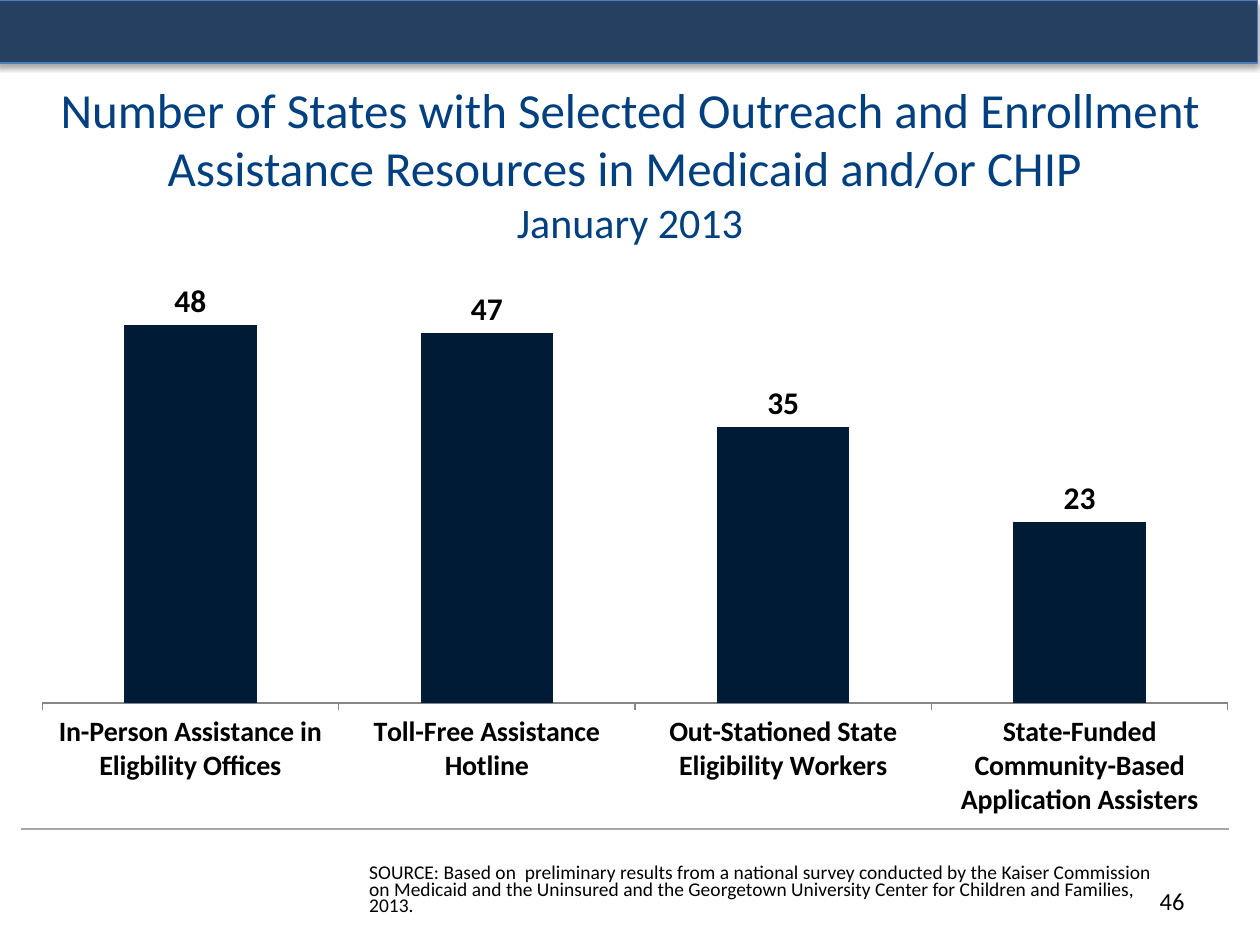
from lxml.etree import SubElement
from pptx import Presentation
from pptx.chart.data import CategoryChartData
from pptx.dml.color import RGBColor
from pptx.enum.chart import XL_CHART_TYPE as ChartType
from pptx.enum.chart import XL_LABEL_POSITION as LabelPosition
from pptx.enum.chart import XL_TICK_LABEL_POSITION as TickLabelPosition
from pptx.enum.chart import XL_TICK_MARK as TickMark
from pptx.enum.shapes import MSO_CONNECTOR as Connector
from pptx.enum.shapes import MSO_SHAPE as Shape
from pptx.enum.text import MSO_ANCHOR as Anchor
from pptx.enum.text import MSO_AUTO_SIZE as AutoSize
from pptx.enum.text import PP_ALIGN as Align
from pptx.oxml import parse_xml
from pptx.oxml.ns import nsdecls, qn
from pptx.util import Inches, Pt

WIDTH, HEIGHT = Inches(10), Inches(7.5)
FONT = "Calibri"
BLACK = RGBColor(0x00, 0x00, 0x00)
TITLE_BLUE = RGBColor(0x00, 0x40, 0x80)
BAR_NAVY = RGBColor(0x00, 0x1B, 0x36)
BANNER_FILL = RGBColor(0x25, 0x40, 0x61)
BANNER_LINE = RGBColor(0x4B, 0x7E, 0xBC)
RULE_GRAY = RGBColor(0xA6, 0xA6, 0xA6)
AXIS_GRAY = RGBColor(0x86, 0x86, 0x86)

TITLE = "Number of States with Selected Outreach and Enrollment Assistance Resources in Medicaid and/or CHIP "
DATE = "January 2013"
SOURCE = (
    "SOURCE: Based on  preliminary results from a national survey conducted by the "
    "Kaiser Commission on Medicaid and the Uninsured and the Georgetown University "
    "Center for Children and Families, 2013."
)
STATES = {
    "In-Person Assistance in Eligbility Offices": 48,
    "Toll-Free Assistance Hotline": 47,
    "Out-Stationed State Eligibility Workers": 35,
    "State-Funded Community-Based Application Assisters": 23,
}


def box(left, top, width, height):
    return [Inches(length) for length in (left, top, width, height)]


def set_format(target, values):
    for name, value in values.items():
        setattr(target, name, value)


def set_font(font, size, color=BLACK, bold=False):
    set_format(font, {"name": FONT, "size": Pt(size), "bold": bold})
    font.color.rgb = color


def place(shape, bounds, anchor):
    set_format(shape, dict(zip(("left", "top", "width", "height"), bounds)))
    set_format(shape.text_frame, {
        "word_wrap": True, "auto_size": AutoSize.NONE, "vertical_anchor": anchor,
    })
    return shape.text_frame.paragraphs[0]


def add_run(paragraph, text, size, color=BLACK):
    run = paragraph.add_run()
    run.text = text
    set_font(run.font, size, color)


def fill_title(slide):
    paragraph = place(slide.shapes.title, box(0, 0.67, 10, 1.25), Anchor.MIDDLE)
    paragraph.alignment = Align.CENTER
    add_run(paragraph, TITLE, 28, TITLE_BLUE)
    paragraph.add_line_break()
    add_run(paragraph, DATE, 24, TITLE_BLUE)


def fill_source(slide):
    paragraph = place(slide.placeholders[1], box(2.83, 6.83, 6.42, 0.5), Anchor.TOP)
    properties = paragraph._p.get_or_add_pPr()
    properties.set("marL", "0")
    properties.set("indent", "0")
    SubElement(properties, qn("a:buNone"))
    set_format(paragraph, {
        "alignment": Align.LEFT, "line_spacing": 0.7, "space_before": Pt(0),
    })
    add_run(paragraph, SOURCE, 11.1)


def add_page_number(slide, number):
    bounds = box(7.17, 6.95, 2.33, 0.4)
    paragraph = place(slide.shapes.add_textbox(*bounds), bounds, Anchor.MIDDLE)
    paragraph.alignment = Align.RIGHT
    add_run(paragraph, number, 14)


def add_banner(slide):
    banner = slide.shapes.add_shape(Shape.RECTANGLE, *box(-0.02, 0, 10, 0.5))
    banner.fill.solid()
    banner.fill.fore_color.rgb = BANNER_FILL
    banner.line.color.rgb = BANNER_LINE
    banner.line.width = Pt(0.75)
    banner.shadow.inherit = False
    effects = banner._element.spPr.find(qn("a:effectLst"))
    effects.append(parse_xml(
        f'<a:outerShdw {nsdecls("a")} blurRad="{Pt(3.1)}" dist="{Pt(1.8)}" '
        'dir="5400000" rotWithShape="0"><a:srgbClr val="000000">'
        '<a:alpha val="35000"/></a:srgbClr></a:outerShdw>'
    ))


def add_rule(slide):
    rule = slide.shapes.add_connector(
        Connector.STRAIGHT, Inches(0.17), Inches(6.58), Inches(9.75), Inches(6.58))
    rule.line.color.rgb = RULE_GRAY
    rule.line.width = Pt(0.75)
    SubElement(rule._element.spPr, qn("a:effectLst"))


def set_plot_area(chart, x, y, w, h):
    plot_area = chart._chartSpace.chart.plotArea
    for layout in plot_area.findall(qn("c:layout")):
        plot_area.remove(layout)
    layout = SubElement(plot_area, qn("c:layout"))
    plot_area.insert(0, layout)
    manual = SubElement(layout, qn("c:manualLayout"))
    values = {"layoutTarget": "inner", "xMode": "edge", "yMode": "edge",
              "x": x, "y": y, "w": w, "h": h}
    for name, value in values.items():
        SubElement(manual, qn(f"c:{name}")).set("val", str(value))


def add_state_chart(slide):
    data = CategoryChartData(number_format="0")
    data.categories = list(STATES)
    data.add_series("Series 1", list(STATES.values()))
    chart = slide.shapes.add_chart(
        ChartType.COLUMN_CLUSTERED, *box(0.33, 1.5, 9.42, 5.32), data).chart
    set_format(chart, {"has_legend": False, "has_title": False})
    set_font(chart.font, 18)
    set_plot_area(chart, 0, 0.062, 1, 0.705)

    set_format(chart.value_axis, {
        "visible": False, "has_major_gridlines": False,
        "minimum_scale": 0, "maximum_scale": 60,
    })
    axis = chart.category_axis
    set_format(axis, {
        "major_tick_mark": TickMark.OUTSIDE, "minor_tick_mark": TickMark.NONE,
        "tick_label_position": TickLabelPosition.NEXT_TO_AXIS,
    })
    axis.format.line.color.rgb = AXIS_GRAY
    axis.format.line.width = Pt(0.75)
    set_font(axis.tick_labels.font, 16, bold=True)

    plot = chart.plots[0]
    set_format(plot, {"gap_width": 124, "vary_by_categories": False})
    series = plot.series[0]
    series.format.fill.solid()
    series.format.fill.fore_color.rgb = BAR_NAVY
    set_format(series.data_labels, {
        "show_value": True, "position": LabelPosition.OUTSIDE_END,
        "number_format": "0", "number_format_is_linked": False,
    })
    set_font(series.data_labels.font, 18, bold=True)


def main():
    presentation = Presentation()
    set_format(presentation, {"slide_width": WIDTH, "slide_height": HEIGHT})
    slide = presentation.slides.add_slide(presentation.slide_layouts[1])
    fill_title(slide)
    fill_source(slide)
    add_state_chart(slide)
    add_banner(slide)
    add_rule(slide)
    add_page_number(slide, "46")
    presentation.save("out.pptx")


if __name__ == "__main__":
    main()
